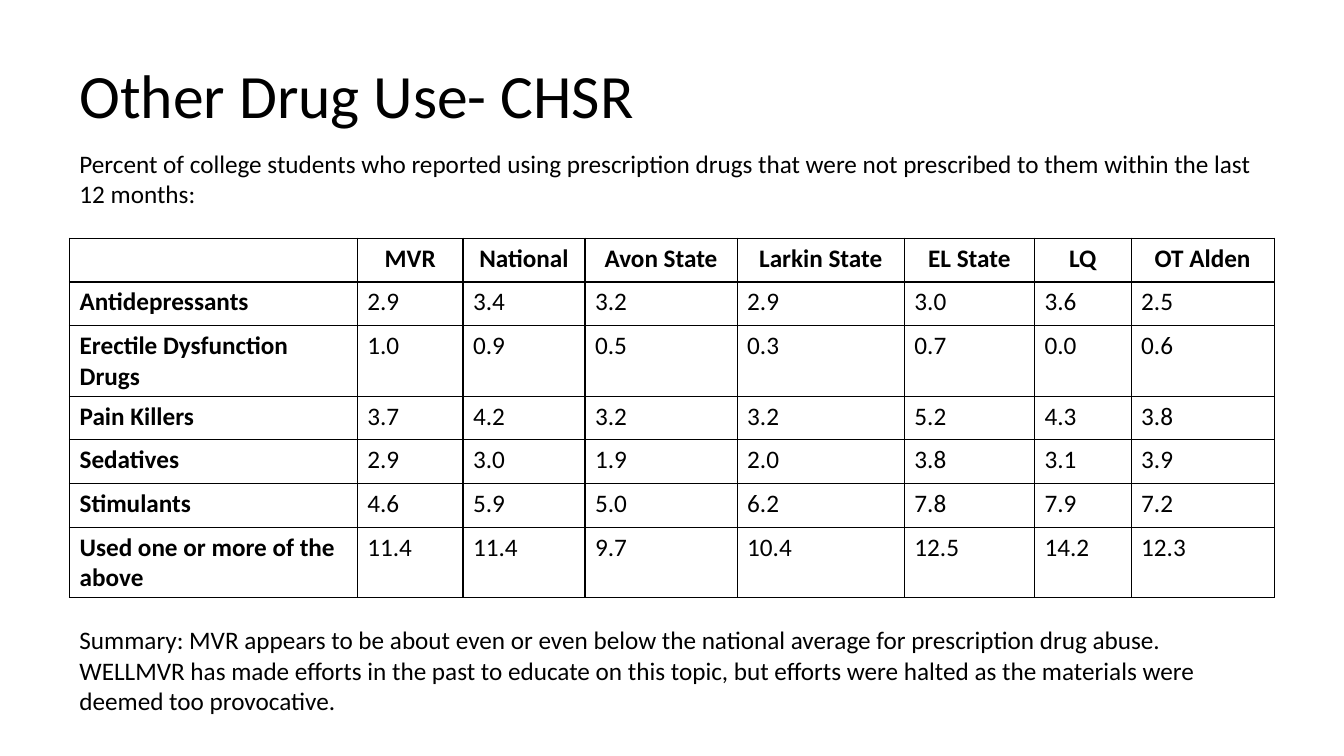
from dataclasses import dataclass

from lxml import etree
from pptx import Presentation
from pptx.dml.color import RGBColor
from pptx.enum.text import MSO_ANCHOR, PP_ALIGN
from pptx.oxml.ns import qn
from pptx.util import Pt

LEFT, CENTER = PP_ALIGN.LEFT, PP_ALIGN.CENTER
TOP, MIDDLE = MSO_ANCHOR.TOP, MSO_ANCHOR.MIDDLE


@dataclass(frozen=True)
class Theme:
    font: str = "Calibri"
    ink: str = "000000"
    title: int = 44
    body: int = 18
    rule: int = 1


theme = Theme()


def write(frame, text, size=theme.body, bold=False, align=LEFT, space=1.0):
    frame.word_wrap = True
    para = frame.paragraphs[0]
    para.alignment = align
    para.line_spacing = space
    run = para.add_run()
    run.text = text
    font = run.font
    font.name, font.size, font.bold = theme.font, Pt(size), bold
    font.color.rgb = RGBColor.from_string(theme.ink)


def border(cell):
    """Rule all four sides of a cell and leave it unfilled."""
    props = cell._tc.get_or_add_tcPr()
    for side in ("a:lnL", "a:lnR", "a:lnT", "a:lnB"):
        line = etree.SubElement(props, qn(side), w=str(Pt(theme.rule)))
        fill = etree.SubElement(line, qn("a:solidFill"))
        etree.SubElement(fill, qn("a:srgbClr"), val=theme.ink)
    cell.fill.background()


deck = Presentation()
deck.slide_width, deck.slide_height = Pt(960), Pt(540)
slide = deck.slides.add_slide(deck.slide_layouts[6])

EDGE = 49.7
WIDTH = 860.6

# Title, lead-in and summary
texts = [
    ("Other Drug Use- CHSR", 28.8, 828, 83.5, MIDDLE,
     {"size": theme.title, "space": 0.9}),
    ("Percent of college students who reported using prescription drugs "
     "that were not prescribed to them within the last 12 months:",
     102.2, WIDTH, 51, TOP, {}),
    ("Summary: MVR appears to be about even or even below the national "
     "average for prescription drug abuse. WELLMVR has made efforts in the "
     "past to educate on this topic, but efforts were halted as the "
     "materials were deemed too provocative.",
     442.6, WIDTH, 72.7, TOP, {}),
]
for text, top, width, height, anchor, style in texts:
    box = slide.shapes.add_textbox(Pt(EDGE), Pt(top), Pt(width), Pt(height))
    box.text_frame.vertical_anchor = anchor
    write(box.text_frame, text, **style)

# Use by drug and school
rows = [
    ("", "MVR", "National", "Avon State", "Larkin State", "EL State", "LQ",
     "OT Alden"),
    ("Antidepressants", "2.9", "3.4", "3.2", "2.9", "3.0", "3.6", "2.5"),
    ("Erectile Dysfunction Drugs", "1.0", "0.9", "0.5", "0.3", "0.7", "0.0",
     "0.6"),
    ("Pain Killers", "3.7", "4.2", "3.2", "3.2", "5.2", "4.3", "3.8"),
    ("Sedatives", "2.9", "3.0", "1.9", "2.0", "3.8", "3.1", "3.9"),
    ("Stimulants", "4.6", "5.9", "5.0", "6.2", "7.8", "7.9", "7.2"),
    ("Used one or more of the above", "11.4", "11.4", "9.7", "10.4", "12.5",
     "14.2", "12.3"),
]
widths = [205.5, 75.6, 87.1, 108.7, 119.5, 92.9, 69.1, 102.2]
ROW = 31.2

table = slide.shapes.add_table(
    len(rows), len(widths), Pt(EDGE), Pt(170.2), Pt(WIDTH),
    Pt(ROW * len(rows))).table
table.first_row = table.horz_banding = False
for col, width in zip(table.columns, widths):
    col.width = Pt(width)
for r, row in enumerate(rows):
    table.rows[r].height = Pt(ROW)
    for c, text in enumerate(row):
        cell = table.cell(r, c)
        border(cell)
        if text:
            write(cell.text_frame, text, bold=r == 0 or c == 0,
                  align=CENTER if r == 0 else LEFT)

deck.save("out.pptx")
